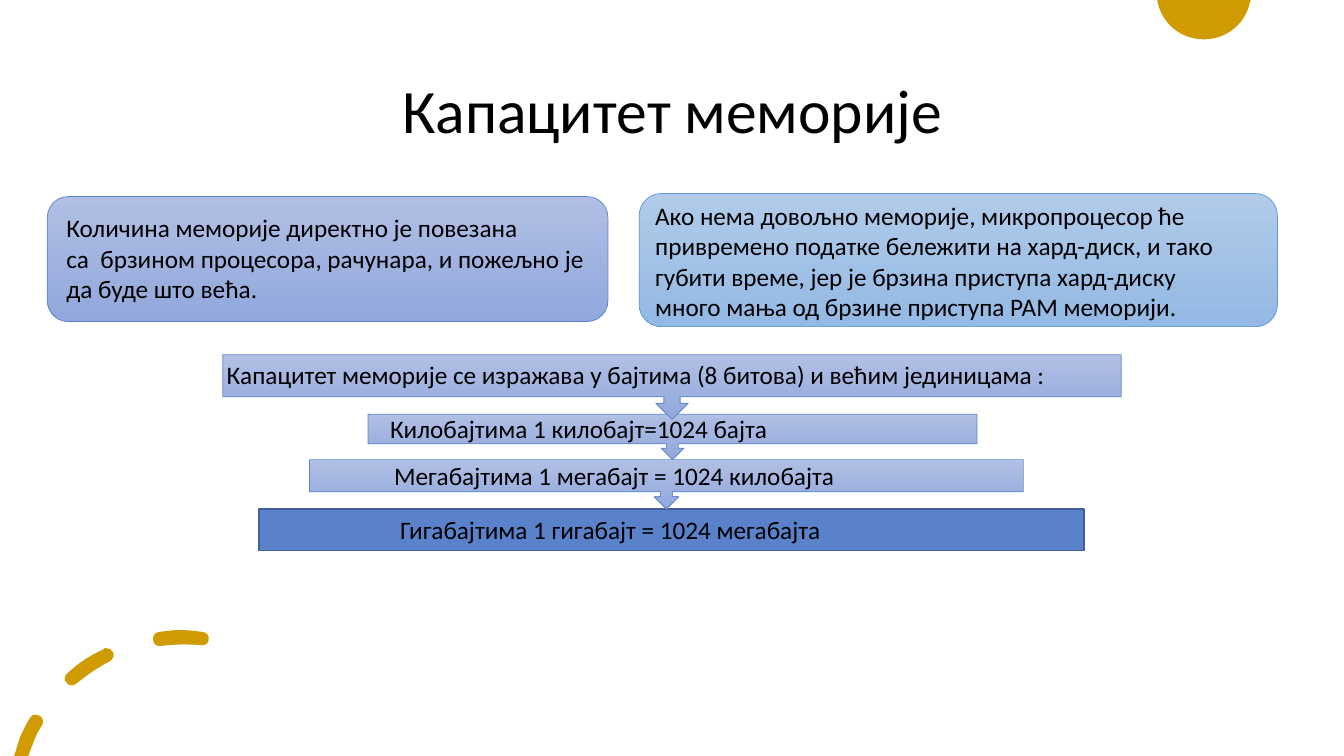
from lxml.etree import Element
from pptx import Presentation
from pptx.dml.color import RGBColor as Rgb
from pptx.enum.shapes import MSO_SHAPE as Preset
from pptx.enum.text import MSO_ANCHOR as Anchor, MSO_AUTO_SIZE as AutoSize, PP_ALIGN as Align
from pptx.oxml.ns import qn
from pptx.util import Emu, Pt

PX = 9144  # one px is a hundredth of an inch
TIE = "~"  # stands for a no-break space in the texts below
COLORS = {
    "gold": "CF9B00", "black": "000000",
    "indigo": "5A82CB", "indigo_edge": "436096",
    "indigo_top": "B0BFE4", "indigo_bottom": "92A8DC",
    "sky": "5B9BD5", "sky_top": "B1CBE9", "sky_bottom": "93B9E4",
}
INDIGO_FADE = ("indigo_top", "indigo_bottom")
SKY_FADE = ("sky_top", "sky_bottom")

# Outlines: start point, then straight (2 numbers) or curved (6 numbers) steps
CORNER_DISC = [[
    (1148, 0), (1241, 0), (1240, 1),
    (1236, 23, 1217, 39, 1194, 39), (1171, 39, 1152, 23, 1148, 1),
]]
DASHED_ARC = [
    [(36, 709), (34, 708, 31, 710, 30, 712), (26, 718, 23, 725, 20, 731),
     (14, 750), (28, 750), (33, 737), (35, 731, 38, 725, 42, 719),
     (44, 716, 42, 711, 39, 710), (38, 709, 37, 709, 36, 709)],
    [(105, 643), (104, 643, 103, 643, 103, 644), (90, 650, 77, 658, 67, 668),
     (64, 670, 63, 675, 66, 677), (67, 679, 69, 680, 71, 680),
     (73, 680, 74, 679, 76, 678), (86, 670, 97, 662, 109, 656),
     (112, 654, 114, 650, 112, 647), (111, 644, 108, 643, 105, 643)],
    [(179, 625), (172, 625, 165, 626, 158, 627), (154, 627, 151, 631, 152, 635),
     (152, 638, 155, 641, 158, 641), (173, 639, 186, 639, 199, 640),
     (203, 641, 207, 638, 207, 635), (208, 631, 205, 627, 201, 627),
     (194, 626, 186, 625, 179, 625)],
]

# Unit steps from back to front
CALLOUTS = [
    (307, 456, 708, 49),
    (365, 411, 604, 45),
    (221, 352, 891, 64),
]
TEXTS = [
    ((56, 206, 536, 101), "Количина меморије директно је повезана са~~брзином~процесора, "
                          "рачунара, и пожељно је да буде што већа."),
    ((640, 194, 610, 130), "Ако нема довољно меморије, микропроцесор~ће привремено податке~"
                           "бележити~на~хард-диск, и тако губити време, јер је брзина приступа "
                           "хард-диску много~мања од брзине приступа РАМ меморији."),
    ((215, 352, 904, 40), "Капацитет меморије се изражава у бајтима (8 битова) и већим јединицама :"),
    ((377, 405, 458, 40), "Килобајтима~1~килобајт=1024 бајта"),
    ((381, 452, 560, 40), "Мегабајтима~1 мегабајт = 1024 килобајта"),
    ((387, 505, 581, 40), "Гигабајтима 1~гигабајт = 1024~мегабајта"),
]


def color(name):
    return Rgb.from_string(COLORS[name])


def to_emu(box):
    return [Emu(length * PX) for length in box]


def set_all(target, values):
    for name, value in values.items():
        setattr(target, name, value)


def bend(shape, steps):
    """Turn the straight segments of a freeform into curves where a step has control points."""
    left, top = shape.left // PX, shape.top // PX
    segments = list(shape.element.iter(qn("a:lnTo")))
    for segment, step in zip(segments, steps):
        if len(step) == 2:
            continue
        segment.tag = qn("a:cubicBezTo")
        for index in (0, 1):
            x, y = step[2 * index:2 * index + 2]
            control = Element(qn("a:pt"), x=str(x - left), y=str(y - top))
            segment.insert(index, control)


def add_outline(slide, outlines):
    builder = slide.shapes.build_freeform(*outlines[0][0], scale=PX)
    for number, (start, *steps) in enumerate(outlines):
        if number:
            builder.move_to(*start)
        builder.add_line_segments([step[-2:] for step in steps], close=True)
    shape = builder.convert_to_shape()
    bend(shape, [step for outline in outlines for step in outline[1:]])
    shape.shadow.inherit = False
    shape.fill.solid()
    shape.fill.fore_color.rgb = color("gold")
    shape.line.fill.background()


def add_panel(slide, preset, box, fill, edge, width=0.5):
    """Add a shape with a plain fill (a name) or a vertical fade (two names)."""
    shape = slide.shapes.add_shape(preset, *to_emu(box))
    shape.shadow.inherit = False
    if isinstance(fill, str):
        shape.fill.solid()
        shape.fill.fore_color.rgb = color(fill)
    else:
        shape.fill.gradient()
        shape.fill.gradient_angle = 270
        for stop, name, position in zip(shape.fill.gradient_stops, fill, (0, 1)):
            stop.color.rgb = color(name)
            stop.position = position
    shape.line.color.rgb = color(edge)
    shape.line.width = Pt(width)


def add_text(slide, box, text, size=18, frame_format=None, paragraph_format=None):
    frame = slide.shapes.add_textbox(*to_emu(box)).text_frame
    set_all(frame, {"word_wrap": True, **(frame_format or {})})
    paragraph = frame.paragraphs[0]
    set_all(paragraph, paragraph_format or {})
    run = paragraph.add_run()
    run.text = text.replace(TIE, chr(160))
    set_all(run.font, {"name": "Calibri", "size": Pt(size)})
    run.font.color.rgb = color("black")


def main():
    presentation = Presentation()
    set_all(presentation, {"slide_width": Emu(1333 * PX), "slide_height": Emu(750 * PX)})
    slide = presentation.slides.add_slide(presentation.slide_layouts[6])

    # Corner decorations
    for outlines in (CORNER_DISC, DASHED_ARC):
        add_outline(slide, outlines)

    # Chain of memory units
    add_panel(slide, Preset.RECTANGLE, (257, 505, 818, 41), "indigo", "indigo_edge", 1)
    for box in CALLOUTS:
        add_panel(slide, Preset.DOWN_ARROW_CALLOUT, box, INDIGO_FADE, "indigo")

    # Two statement panels
    add_panel(slide, Preset.ROUNDED_RECTANGLE, (47, 195, 556, 124), INDIGO_FADE, "indigo")
    add_panel(slide, Preset.ROUNDED_RECTANGLE, (634, 192, 633, 132), SKY_FADE, "sky")

    # Title and texts
    add_text(slide, (92, 40, 1150, 145), "Капацитет меморије", 44,
             {"vertical_anchor": Anchor.MIDDLE},
             {"alignment": Align.CENTER, "line_spacing": 0.9})
    for box, text in TEXTS:
        add_text(slide, box, text, frame_format={"auto_size": AutoSize.SHAPE_TO_FIT_TEXT})

    presentation.save("out.pptx")


if __name__ == "__main__":
    main()
